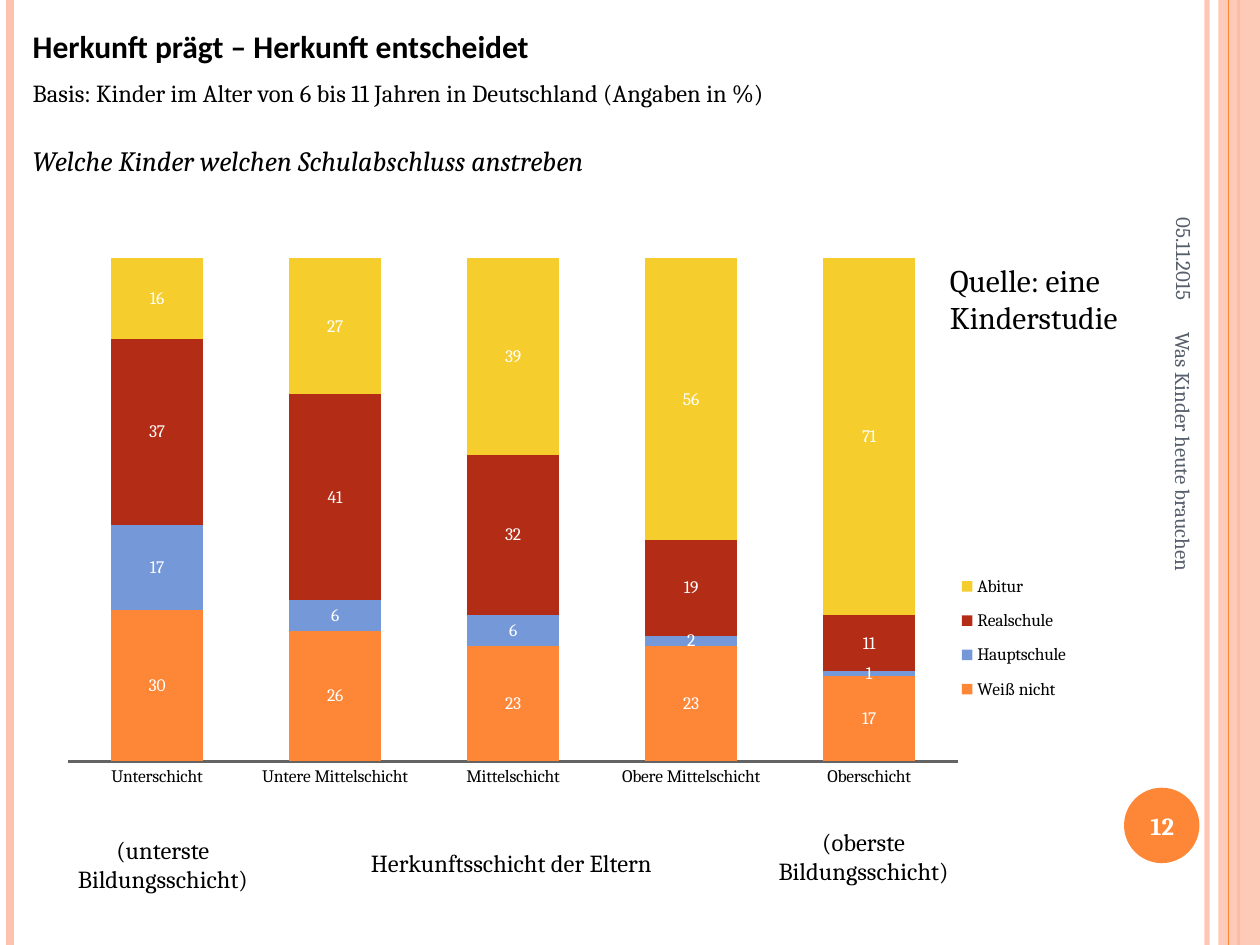
from pptx import Presentation
from pptx.chart.data import CategoryChartData as Data
from pptx.dml.color import RGBColor as Rgb
from pptx.enum.chart import XL_CHART_TYPE as Kind, XL_LEGEND_POSITION as Side
from pptx.enum.chart import XL_LABEL_POSITION as Spot, XL_TICK_LABEL_POSITION as Tick
from pptx.enum.chart import XL_TICK_MARK as Mark
from pptx.enum.shapes import MSO_CONNECTOR as Link, MSO_SHAPE as Form
from pptx.enum.text import MSO_ANCHOR as Anchor, PP_ALIGN as Align
from pptx.oxml import parse_xml
from pptx.oxml.ns import nsdecls, qn
from pptx.util import Cm, Pt


def hue(code):
    return Rgb.from_string(code)


def put(obj, vals):
    for key, val in vals.items():
        setattr(obj, key, val)


deck = Presentation()
put(deck, {"slide_width": Cm(25.4), "slide_height": Cm(19.05)})
slide = deck.slides.add_slide(deck.slide_layouts[6])
shapes = slide.shapes

rules = []
for x, code, width in (
    (24.33, "FEC3AE", 3),
    (0.2, "FEC3AE", 4.5),
    (24.97, "FE8637", 1.5),
    (24.77, "FE8637", 0.75),
):
    rule = shapes.add_connector(Link.STRAIGHT, Cm(x), 0, Cm(x), Cm(19.05))
    rule.line.color.rgb = hue(code)
    rule.line.width = Pt(width)
    rule._element.spPr.append(parse_xml(f"<a:effectLst {nsdecls('a')}/>"))
    rules.append(rule)

band = shapes.add_shape(Form.RECTANGLE, Cm(24.56), 0, Cm(0.84), Cm(19.05))
disc = shapes.add_shape(Form.OVAL, Cm(22.66), Cm(15.88), Cm(1.52), Cm(1.52))
for shape, code in ((band, "FEC3AE"), (disc, "FE8637")):
    shape.shadow.inherit = False
    shape.fill.solid()
    shape.fill.fore_color.rgb = hue(code)
    shape.line.fill.background()
band._element.addnext(rules[3]._element)

for shape, part in ((band, 87), (rules[0], 93)):
    tone = next(shape._element.spPr.iter(qn("a:srgbClr")))
    tone.append(parse_xml(f'<a:alpha {nsdecls("a")} val="{part * 1000}"/>'))

data = Data()
data.categories = ["Unterschicht", "Untere Mittelschicht", "Mittelschicht",
                   "Obere Mittelschicht", "Oberschicht"]
rows = (
    ("Weiß nicht", (30, 26, 23, 23, 17), "FE8637"),
    ("Hauptschule", (17, 6, 6, 2, 1), "7598D9"),
    ("Realschule", (37, 41, 32, 19, 11), "B32C16"),
    ("Abitur", (16, 27, 39, 56, 71), "F5CD2D"),
)
for name, vals, code in rows:
    data.add_series(name, vals)
chart = shapes.add_chart(Kind.COLUMN_STACKED_100, Cm(1.09), Cm(5.21),
                         Cm(21.62), Cm(11.33), data).chart
put(chart, {"has_title": False, "has_legend": True})
put(chart.font, {"name": "Cambria", "size": Pt(10)})
chart.font.color.rgb = hue("000000")
put(chart.legend, {"position": Side.RIGHT, "include_in_layout": True})
put(chart.value_axis, {"visible": False, "has_major_gridlines": False, "major_unit": 0.2})
put(chart.category_axis, {"major_tick_mark": Mark.NONE,
                          "tick_label_position": Tick.NEXT_TO_AXIS})
chart.category_axis.format.line.color.rgb = hue("646464")
chart.category_axis.format.line.width = Pt(1.5)

plot = chart.plots[0]
put(plot, {"gap_width": 95, "overlap": 100, "vary_by_categories": False})
for part, (name, vals, code) in zip(plot.series, rows):
    part.format.fill.solid()
    part.format.fill.fore_color.rgb = hue(code)
    tags = part.data_labels
    put(tags, {"show_value": True, "position": Spot.CENTER})
    put(tags.font, {"name": "Cambria", "size": Pt(10)})
    tags.font.color.rgb = hue("FFFFFF")

area = chart._chartSpace.chart.plotArea
for box, at, goal, dims in (
    (area, 0, '<c:layoutTarget val="inner"/>', (0.013, 0, 0.83, 0.895)),
    (chart.legend._element, 1, "", (0.83, 0.54, 0.13, 0.27)),
):
    for old in box.findall(qn("c:layout")):
        box.remove(old)
    modes = '<c:xMode val="edge"/><c:yMode val="edge"/>'
    sizes = "".join(f'<c:{key} val="{val}"/>' for key, val in zip("xywh", dims))
    box.insert(at, parse_xml(f"<c:layout {nsdecls('c')}><c:manualLayout>{goal}{modes}"
                             f"{sizes}</c:manualLayout></c:layout>"))

head = {"size": Pt(18), "name": "Calibri", "bold": True}
text = {"size": Pt(14), "name": "Cambria"}
lead = {"size": Pt(16), "name": "Cambria", "italic": True}
side = {"size": Pt(12), "name": "Cambria"}
big = {"size": Pt(18), "name": "Cambria"}
left, mid, right = Align.LEFT, Align.CENTER, Align.RIGHT
top, core = Anchor.TOP, Anchor.MIDDLE

for dims, turn, anchor, align, code, paras in (
    ((0.41, 0.43, 24.41, 1.93), 0, top, left, "000000", (
        ("Herkunft prägt – Herkunft entscheidet", head),
        ("Basis: Kinder im Alter von 6 bis 11 Jahren in Deutschland (Angaben in %)", text))),
    ((0.41, 2.77, 15.01, 0.94), 0, top, left, "000000",
     (("Welche Kinder welchen Schulabschluss anstreben", lead),)),
    ((7.06, 16.97, 6.5, 0.74), 0, top, mid, "000000",
     (("Herkunftsschicht der Eltern", text),)),
    ((1.09, 16.71, 4.39, 1.45), 0, top, mid, "000000",
     (("(unterste Bildungsschicht)", text),)),
    ((15.11, 16.54, 4.6, 1.45), 0, top, mid, "000000",
     (("(oberste Bildungsschicht)", text),)),
    ((22.58, 15.93, 1.7, 1.45), 0, core, mid, "FFFFFF",
     (("12", {**text, "bold": True}),)),
    ((19.41, 10.39, 8.89, 1.02), 90, core, left, "575F6D",
     (("Was Kinder heute brauchen", side),)),
    ((21.08, 3, 5.59, 1.02), 90, core, right, "575F6D", (("05.11.2015", side),)),
    ((18.9, 5.13, 4.6, 1.8), 0, top, left, "000000",
     (("Quelle: eine Kinderstudie", big),)),
):
    box = shapes.add_textbox(*map(Cm, dims))
    box.rotation = turn
    frame = box.text_frame
    put(frame, {"word_wrap": True, "vertical_anchor": anchor})
    for i, (words, style) in enumerate(paras):
        para = frame.add_paragraph() if i else frame.paragraphs[0]
        put(para, {"alignment": align, "space_before": Pt(7 * i)})
        run = para.add_run()
        run.text = words
        put(run.font, style)
        run.font.color.rgb = hue(code)

deck.save("out.pptx")
